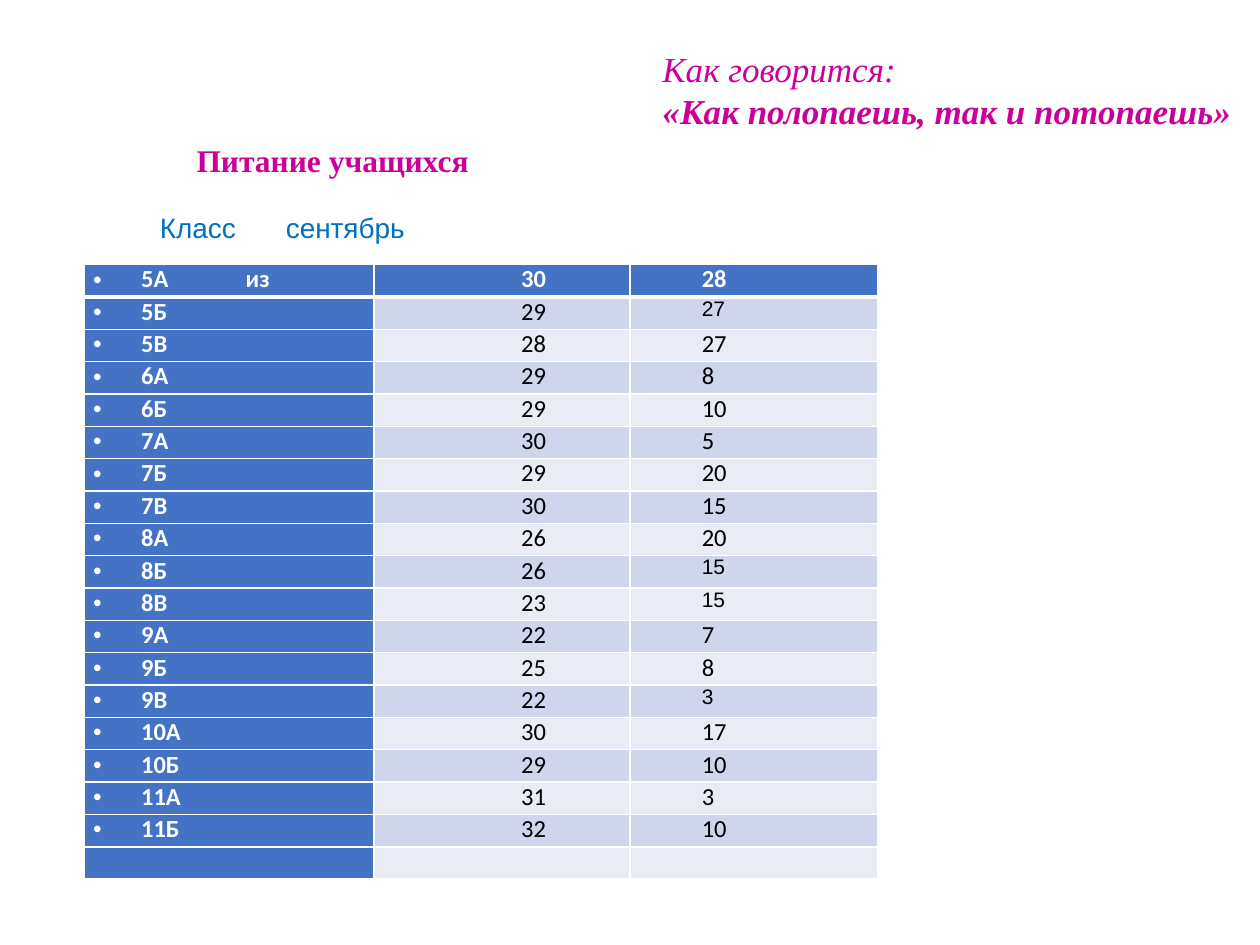
from typing import NamedTuple

from lxml.etree import SubElement
from pptx import Presentation
from pptx.dml.color import RGBColor
from pptx.enum.text import MSO_ANCHOR as Anchor, PP_ALIGN as Align
from pptx.oxml.ns import qn
from pptx.util import Inches, Pt

COLORS = {
    "white": "FFFFFF",
    "black": "000000",
    "magenta": "CC0099",
    "label": "0070C0",
    "header": "4472C4",
    "band_dark": "CFD5EA",
    "band_light": "E9EBF5",
}


class ClassMeals(NamedTuple):
    name: str
    pupils: str
    eating: str
    eating_font: str = "Calibri"


MEALS = [
    ClassMeals("5А\tиз", "30", "28"),
    ClassMeals("5Б", "29", "27", "Arial"),
    ClassMeals("5В", "28", "27"),
    ClassMeals("6А", "29", "8"),
    ClassMeals("6Б", "29", "10"),
    ClassMeals("7А", "30", "5"),
    ClassMeals("7Б", "29", "20"),
    ClassMeals("7В", "30", "15"),
    ClassMeals("8А", "26", "20"),
    ClassMeals("8Б", "26", "15", "Arial"),
    ClassMeals("8В", "23", "15", "Arial"),
    ClassMeals("9А", "22", "7"),
    ClassMeals("9Б", "25", "8"),
    ClassMeals("9В", "22", "3", "Arial"),
    ClassMeals("10А", "30", "17"),
    ClassMeals("10Б", "29", "10"),
    ClassMeals("11А", "31", "3"),
    ClassMeals("11Б", "32", "10"),
    ClassMeals("", "", ""),
]
COLUMN_WIDTHS = [2.3, 2.03, 1.97]
FONT_SIZES = {"Calibri": 14, "Arial": 12}


def color(name: str) -> RGBColor:
    return RGBColor.from_string(COLORS[name])


def format_runs(paragraph, font: str, size: float, color_name: str,
                bold: bool = False, italic: bool = False) -> None:
    for run in paragraph.runs:
        run.font.name = font
        run.font.size = Pt(size)
        run.font.color.rgb = color(color_name)
        run.font.bold = bold
        run.font.italic = italic


def set_indent(paragraph, margin: float, indent: float) -> None:
    properties = paragraph._p.get_or_add_pPr()
    properties.set("marL", str(Inches(margin)))
    properties.set("indent", str(Inches(indent)))


def add_bullet(paragraph) -> None:
    properties = paragraph._p.get_or_add_pPr()
    SubElement(properties, qn("a:buFont"), typeface="Arial")
    SubElement(properties, qn("a:buChar"), char="•")


def add_tab_stop(paragraph, position: float) -> None:
    tabs = SubElement(paragraph._p.get_or_add_pPr(), qn("a:tabLst"))
    SubElement(tabs, qn("a:tab"), pos=str(Inches(position)), algn="l")


def format_cell(cell, fill: str, bottom_width: float) -> None:
    cell.margin_left = cell.margin_right = Inches(0.07)
    cell.margin_top = cell.margin_bottom = 0
    properties = cell._tc.get_or_add_tcPr()
    for side, width in (("L", 1), ("R", 1), ("T", 1), ("B", bottom_width)):
        line = SubElement(properties, qn(f"a:ln{side}"), w=str(Pt(width)))
        line_fill = SubElement(line, qn("a:solidFill"))
        SubElement(line_fill, qn("a:srgbClr"), val=COLORS["white"])
    cell.fill.solid()
    cell.fill.fore_color.rgb = color(fill)


def fill_cell(cell, text: str, column: int, font: str, emphasized: bool) -> None:
    paragraph = cell.text_frame.paragraphs[0]
    if not text:
        SubElement(paragraph._p, qn("a:endParaRPr"), sz="1200")
        return
    paragraph.text = text
    if column == 0:
        set_indent(paragraph, 0.38, -0.38)
        add_bullet(paragraph)
        if "\t" in text:
            add_tab_stop(paragraph, 1.21)
    else:
        set_indent(paragraph, 0, 0.5)
        paragraph.alignment = Align.CENTER if column == 1 else Align.LEFT
    format_runs(paragraph, font, FONT_SIZES[font],
                "white" if emphasized else "black", bold=emphasized)


def add_meals_table(slide) -> None:
    table = slide.shapes.add_table(
        len(MEALS), len(COLUMN_WIDTHS),
        Inches(0.67), Inches(2.1), Inches(6.3), Inches(4.88)).table
    table.first_col = True
    for column, width in zip(table.columns, COLUMN_WIDTHS):
        column.width = Inches(width)
    for row, meals in enumerate(MEALS):
        band = "band_dark" if row % 2 else "band_light"
        fonts = ("Calibri", "Calibri", meals.eating_font)
        for column, (text, font) in enumerate(zip(meals[:3], fonts)):
            emphasized = row == 0 or column == 0
            cell = table.cell(row, column)
            format_cell(cell, "header" if emphasized else band, 1 if row else 3)
            fill_cell(cell, text, column, font, emphasized)


def add_text_box(slide, left: float, top: float, width: float, height: float,
                 text: str):
    text_box = slide.shapes.add_textbox(
        Inches(left), Inches(top), Inches(width), Inches(height))
    text_frame = text_box.text_frame
    text_frame.word_wrap = True
    text_frame.text = text
    return text_frame.paragraphs


def main() -> None:
    presentation = Presentation()
    presentation.slide_width = Inches(10)
    presentation.slide_height = Inches(7.5)
    slide = presentation.slides.add_slide(presentation.slide_layouts[5])

    # Title
    title = slide.shapes.title
    title.left, title.top = Inches(1.46), Inches(1.1)
    title.width, title.height = Inches(7.4), Inches(5.75)
    title.fill.solid()
    title.fill.fore_color.rgb = color("white")
    title.text_frame.text = "Питание учащихся"
    title.text_frame.vertical_anchor = Anchor.TOP
    heading = title.text_frame.paragraphs[0]
    heading.alignment = Align.LEFT
    heading.line_spacing = 0.9
    format_runs(heading, "Times New Roman", 18, "magenta", bold=True)

    # Saying
    intro, saying = add_text_box(
        slide, 5.16, 0.33, 5.2, 0.77,
        "Как говорится:\n«Как полопаешь, так и потопаешь»")
    format_runs(intro, "Times New Roman", 20, "magenta", italic=True)
    format_runs(saying, "Times New Roman", 20, "magenta", bold=True, italic=True)

    # Meals by class
    add_meals_table(slide)

    # Column labels
    labels = add_text_box(slide, 0.67, 1.62, 7.09, 0.67, "Класс\tсентябрь")[0]
    set_indent(labels, 0, 0.5)
    add_tab_stop(labels, 3.67)
    format_runs(labels, "Arial", 16, "label")

    presentation.save("out.pptx")


if __name__ == "__main__":
    main()
